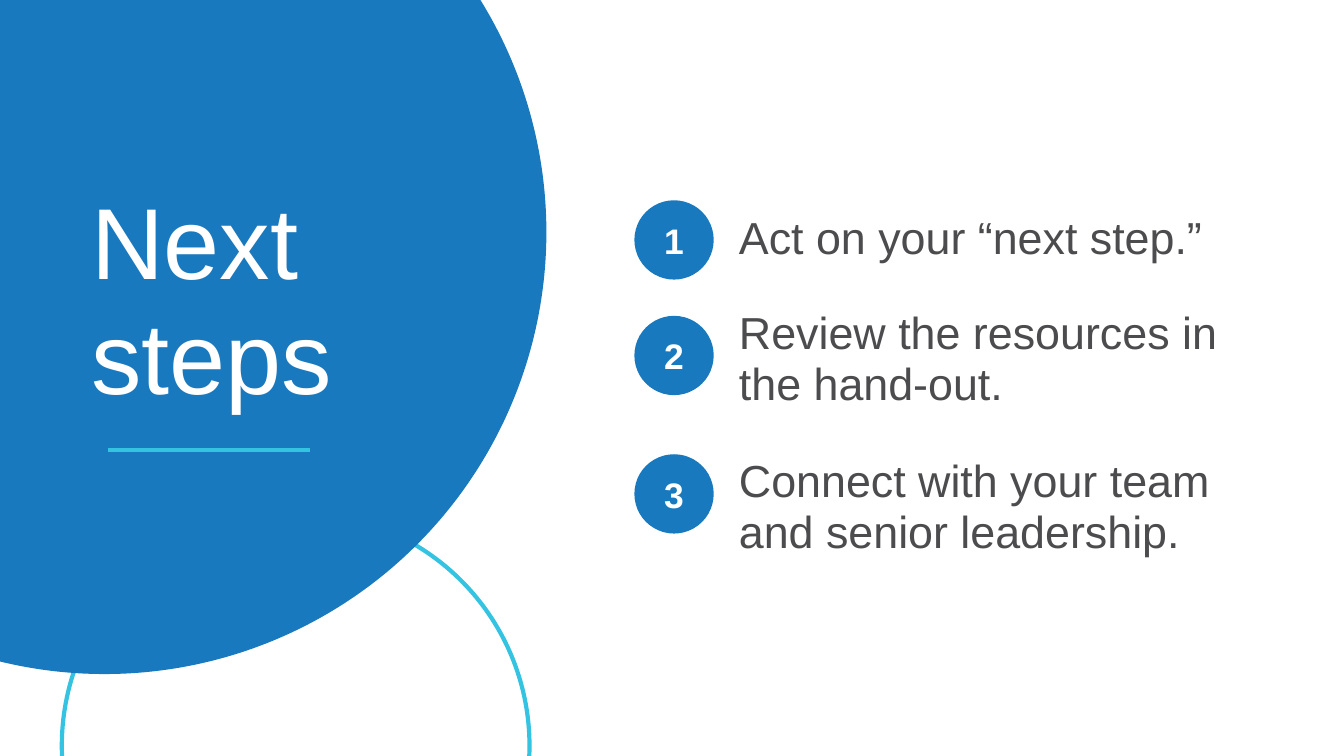
from lxml import etree
from pptx import Presentation
from pptx.dml.color import RGBColor
from pptx.enum.shapes import MSO_CONNECTOR, MSO_SHAPE
from pptx.enum.text import MSO_ANCHOR, PP_ALIGN
from pptx.oxml.ns import qn
from pptx.util import Inches, Pt

OVAL = MSO_SHAPE.OVAL
STRAIGHT = MSO_CONNECTOR.STRAIGHT
TOP, MIDDLE = MSO_ANCHOR.TOP, MSO_ANCHOR.MIDDLE
LEFT, CENTER = PP_ALIGN.LEFT, PP_ALIGN.CENTER

BLUE, CYAN, WHITE, GRAY = "1979BE", "34C3E0", "FFFFFF", "4C4C4E"
COLUMNS, ROWS = 100, 56.25


def color(value):
    return RGBColor.from_string(value)


class Deck:
    """Draws styled elements on a grid of 100 columns by 56.25 rows."""

    font = "Arial"
    line_width = Pt(2.25)

    def __init__(self):
        self.prs = Presentation()
        self.prs.slide_width = Inches(10)
        self.prs.slide_height = Inches(5.625)
        self.slide = self.prs.slides.add_slide(self.prs.slide_layouts[6])

    def grid(self, *box):
        width, height = self.prs.slide_width, self.prs.slide_height
        return [round(v * (height / ROWS if i % 2 else width / COLUMNS))
                for i, v in enumerate(box)]

    def circle(self, col, row, size, fill=None, line=None):
        sp = self.slide.shapes.add_shape(OVAL, *self.grid(col, row, size, size))
        sp.shadow.inherit = False
        if fill:
            sp.fill.solid()
            sp.fill.fore_color.rgb = color(fill)
        else:
            sp.fill.background()
        if line:
            sp.line.color.rgb = color(line)
            sp.line.width = self.line_width
        else:
            sp.line.fill.background()
        return sp

    def rule(self, col, row, length, line):
        sp = self.slide.shapes.add_connector(
            STRAIGHT, *self.grid(col, row, col + length, row))
        sp.line.color.rgb = color(line)
        sp.line.width = self.line_width
        etree.SubElement(sp._element.spPr, qn("a:effectLst"))

    def set_text(self, sp, text, size, ink, bold=False, align=LEFT, anchor=TOP,
                 margins=(0, 0), spacing=None):
        tf = sp.text_frame
        tf.word_wrap = True
        tf.vertical_anchor = anchor
        tf.margin_left = tf.margin_right = Inches(margins[0])
        tf.margin_top = tf.margin_bottom = Inches(margins[1])
        p = tf.paragraphs[0]
        p.text = text
        p.alignment = align
        p.line_spacing = spacing
        p.font.name = self.font
        p.font.size = Pt(size)
        p.font.bold = bold
        p.font.color.rgb = color(ink)

    def text(self, box, text, size, ink, margins):
        sp = self.slide.shapes.add_textbox(*self.grid(*box))
        self.set_text(sp, text, size, ink, margins=margins, spacing=0.95)

    def badge(self, col, row, number):
        sp = self.circle(col, row, 5.9, fill=BLUE)
        self.set_text(sp, str(number), 19, WHITE, True, CENTER, MIDDLE)

    def step(self, number, text, badge_row, text_row, height):
        self.badge(47.2, badge_row, number)
        self.text((54, text_row, 41.4, height), text, 24, GRAY, (0.1, 0.1))


def main():
    deck = Deck()
    deck.circle(4.6, 38.1, 34.8, line=CYAN)
    deck.circle(-25.1, -15.6, 65.75, fill=BLUE)
    deck.rule(8, 33.5, 15.1, CYAN)
    deck.text((5.8, 13.5, 30.1, 15.4), "Next steps", 54, WHITE, (0.1, 0.05))
    steps = [
        ("Act on your “next step.”", 14.9, 14.9, 5.6),
        ("Review the resources in the hand-out.", 23.5, 22, 9.3),
        ("Connect with your team and senior leadership.", 33.8, 33, 9.3),
    ]
    for number, step in enumerate(steps, 1):
        deck.step(number, *step)
    deck.prs.save("out.pptx")


if __name__ == "__main__":
    main()
